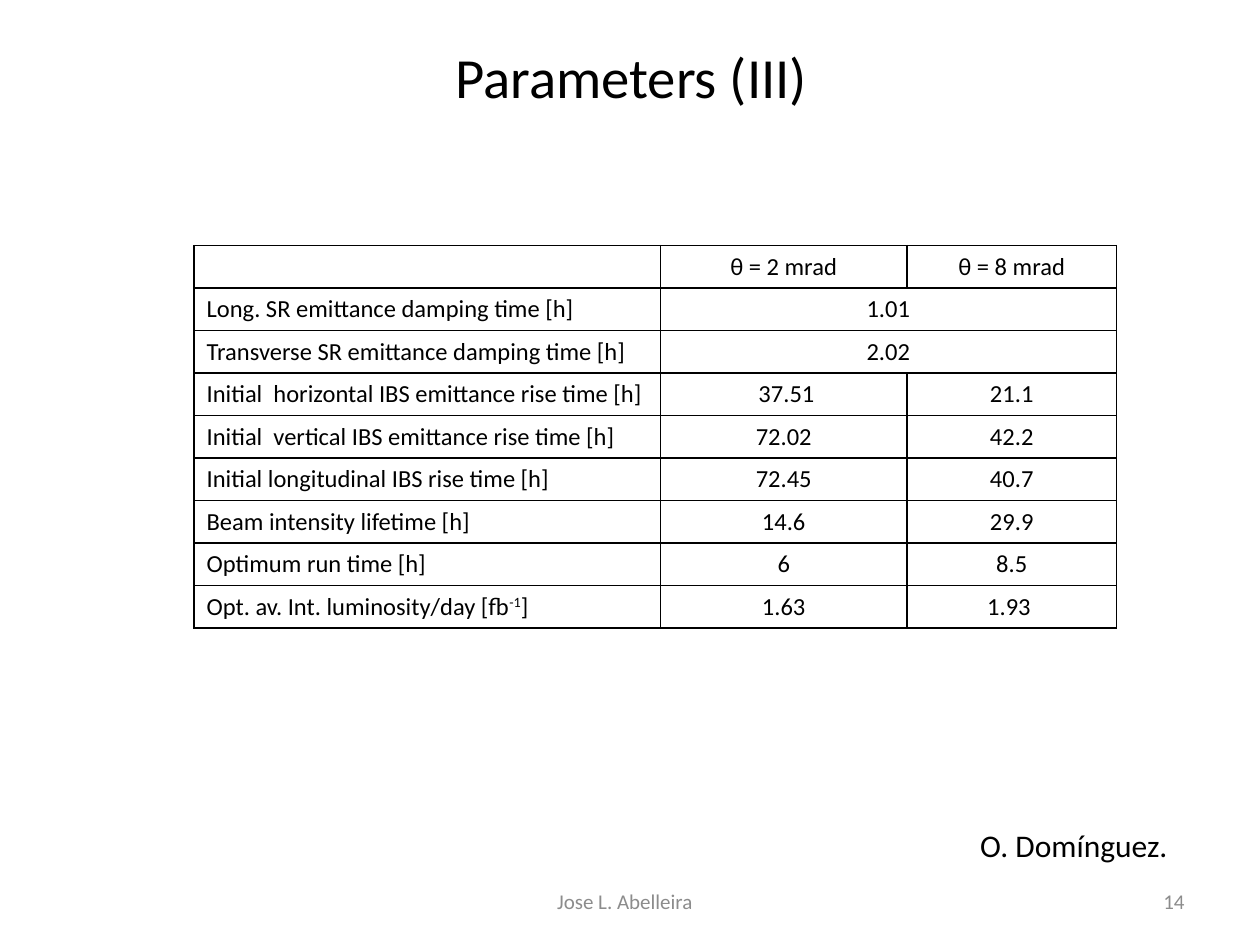
from dataclasses import dataclass

from lxml import etree
from pptx import Presentation
from pptx.dml.color import RGBColor
from pptx.enum.text import MSO_ANCHOR, PP_ALIGN
from pptx.oxml.ns import qn
from pptx.util import Inches, Pt

LEFT, CENTER, RIGHT = PP_ALIGN.LEFT, PP_ALIGN.CENTER, PP_ALIGN.RIGHT
TOP, MIDDLE = MSO_ANCHOR.TOP, MSO_ANCHOR.MIDDLE
FONT = "Calibri"
BLACK, GRAY = "000000", "8C8C8C"
SUPERSCRIPT = "30000"
BORDER_WIDTH = Pt(1)

COLUMN_WIDTHS = (3.7, 1.96, 1.66)
ROW_HEIGHT = 0.33


@dataclass(frozen=True)
class Label:
    text: str
    left: float
    top: float
    width: float
    height: float
    size: float
    color: str
    align: PP_ALIGN
    anchor: MSO_ANCHOR = MIDDLE
    wrap: bool = True


@dataclass(frozen=True)
class Parameter:
    """One table row; a single value spans both angle columns."""
    name: str
    values: tuple[str, ...]
    exponent: str = ""
    name_end: str = ""


LABELS = (
    Label("Parameters (III)", 0.51, 0.29, 9, 0.63, 32.4, BLACK, CENTER),
    Label("14", 7.17, 6.95, 2.33, 0.4, 12, GRAY, RIGHT),
    Label("Jose L. Abelleira", 3.11, 6.95, 3.7, 0.4, 12, GRAY, CENTER),
    Label("O. Domínguez.", 7.68, 6.51, 1.79, 0.4, 18, BLACK, LEFT, TOP, False),
)

PARAMETERS = (
    Parameter("", ("θ = 2 mrad", "θ = 8 mrad")),
    Parameter("Long. SR emittance damping time [h]", ("1.01",)),
    Parameter("Transverse SR emittance damping time [h]", ("2.02",)),
    Parameter("Initial  horizontal IBS emittance rise time [h]", (" 37.51", "21.1")),
    Parameter("Initial  vertical IBS emittance rise time [h]", ("72.02", "42.2")),
    Parameter("Initial longitudinal IBS rise time [h]", ("72.45", "40.7")),
    Parameter("Beam intensity lifetime [h]", ("14.6", "29.9")),
    Parameter("Optimum run time [h]", ("6", "8.5")),
    Parameter("Opt. av. Int. luminosity/day [fb", ("1.63", "1.93 "), "-1", "]"),
)


def rgb(color: str) -> RGBColor:
    return RGBColor.from_string(color)


def format_paragraph(paragraph, size: float, color: str, align: PP_ALIGN) -> None:
    paragraph.alignment = align
    for font in (paragraph.font, *(run.font for run in paragraph.runs)):
        for attribute, value in {"name": FONT, "size": Pt(size)}.items():
            setattr(font, attribute, value)
        font.color.rgb = rgb(color)


def draw_label(slide, label: Label) -> None:
    box = slide.shapes.add_textbox(
        *map(Inches, (label.left, label.top, label.width, label.height)))
    frame = box.text_frame
    frame.word_wrap = label.wrap
    frame.vertical_anchor = label.anchor
    frame.text = label.text
    format_paragraph(frame.paragraphs[0], label.size, label.color, label.align)


def outline_cell(cell) -> None:
    properties = cell._tc.get_or_add_tcPr()
    for side in ("a:lnL", "a:lnR", "a:lnT", "a:lnB"):
        line = etree.SubElement(properties, qn(side), w=str(BORDER_WIDTH))
        fill = etree.SubElement(line, qn("a:solidFill"))
        etree.SubElement(fill, qn("a:srgbClr"), val=BLACK)
    cell.fill.background()


def fill_row(table, row: int, parameter: Parameter) -> None:
    name_cell = table.cell(row, 0)
    paragraph = name_cell.text_frame.paragraphs[0]
    for text, baseline in ((parameter.name, "0"),
                           (parameter.exponent, SUPERSCRIPT),
                           (parameter.name_end, "0")):
        if text:
            run = paragraph.add_run()
            run.text = text
            run._r.get_or_add_rPr().set("baseline", baseline)
    format_paragraph(paragraph, 14, BLACK, LEFT)

    for column, value in enumerate(parameter.values, start=1):
        cell = table.cell(row, column)
        cell.text = value
        format_paragraph(cell.text_frame.paragraphs[0], 14, BLACK, CENTER)
    if len(parameter.values) == 1:
        table.cell(row, 1).merge(table.cell(row, 2))


def draw_parameter_table(slide) -> None:
    table = slide.shapes.add_table(
        len(PARAMETERS), len(COLUMN_WIDTHS), Inches(1.54), Inches(1.95),
        Inches(sum(COLUMN_WIDTHS)), Inches(ROW_HEIGHT * len(PARAMETERS))).table
    table.first_row = table.horz_banding = False
    for column, width in zip(table.columns, COLUMN_WIDTHS):
        column.width = Inches(width)
    for cell in table.iter_cells():
        outline_cell(cell)
    for row, parameter in enumerate(PARAMETERS):
        table.rows[row].height = Inches(ROW_HEIGHT)
        fill_row(table, row, parameter)


def main() -> None:
    presentation = Presentation()
    presentation.slide_width, presentation.slide_height = Inches(10), Inches(7.5)
    slide = presentation.slides.add_slide(presentation.slide_layouts[6])
    draw_parameter_table(slide)
    for label in LABELS:
        draw_label(slide, label)
    presentation.save("out.pptx")


if __name__ == "__main__":
    main()
